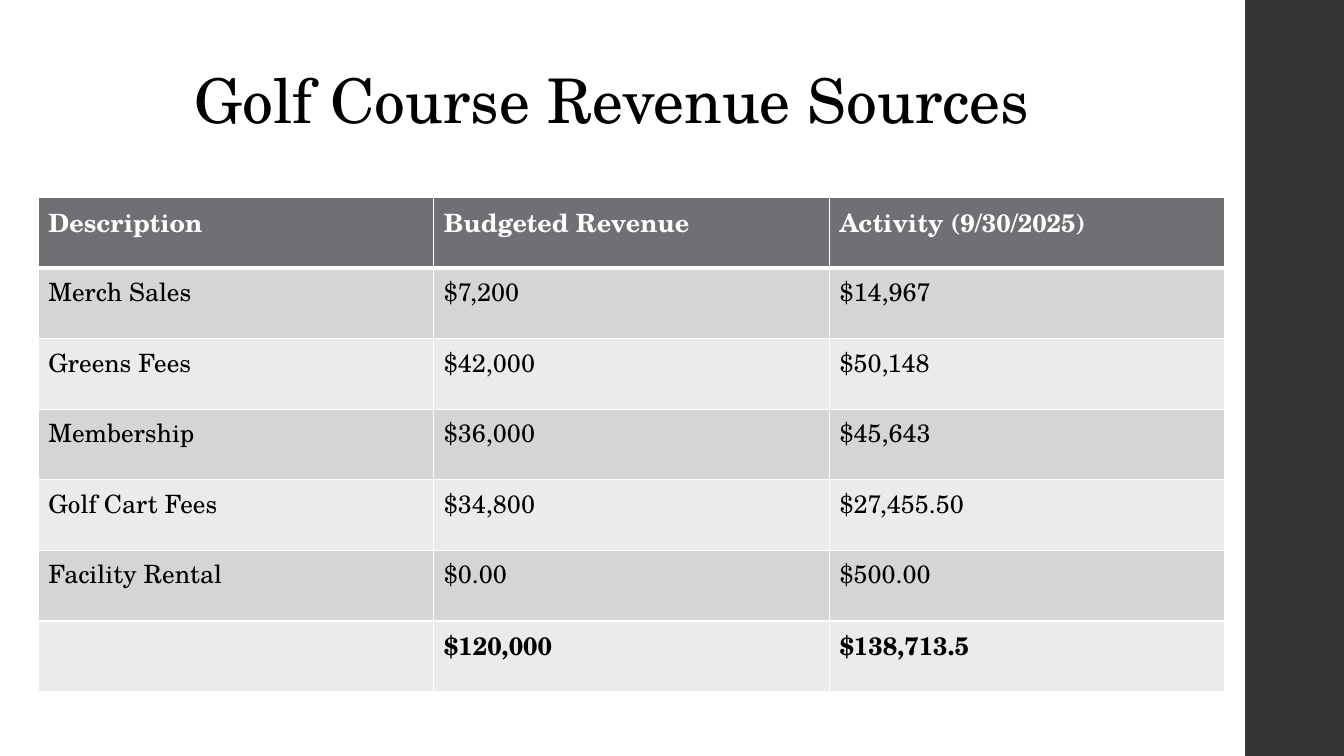
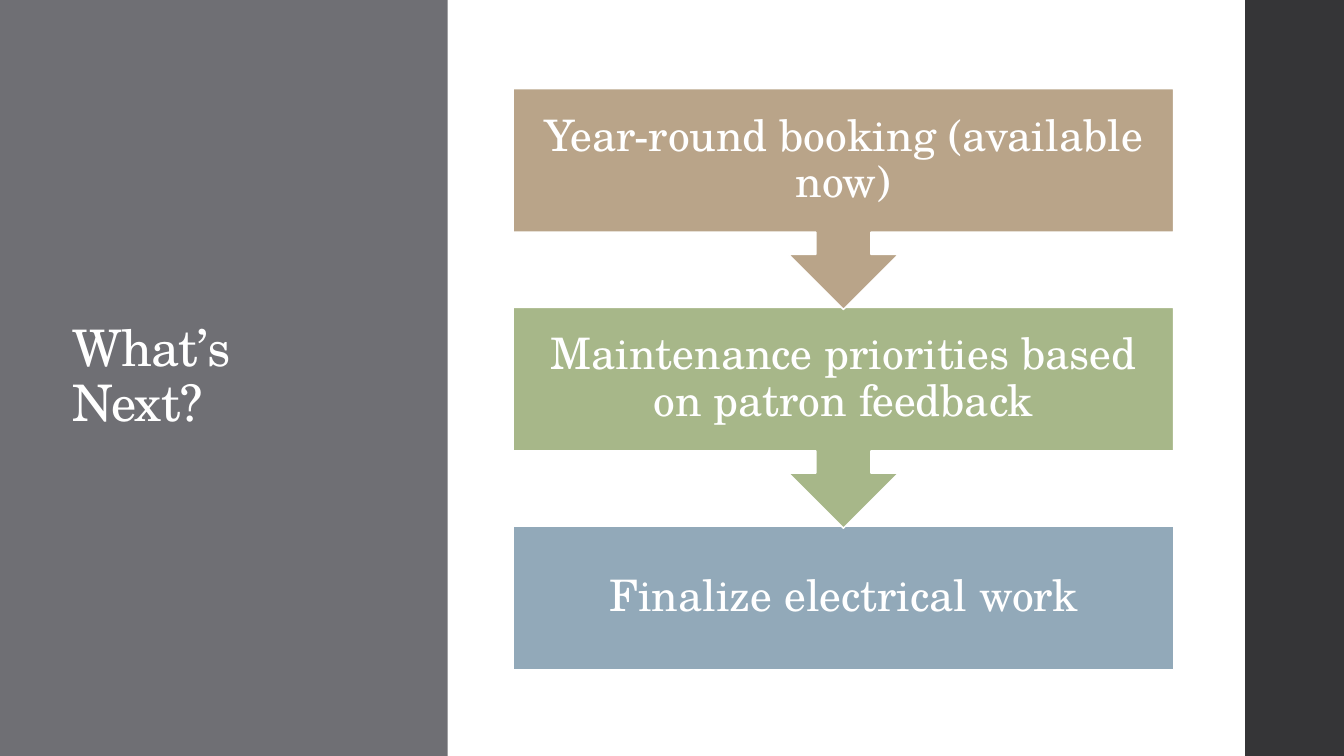
from pptx import Presentation
from pptx.dml.color import RGBColor
from pptx.enum.shapes import MSO_SHAPE as Shape
from pptx.enum.text import MSO_ANCHOR as Anchor, MSO_AUTO_SIZE as AutoSize, PP_ALIGN as Align
from pptx.oxml.ns import qn
from pptx.util import Inches, Pt
from lxml import etree

FONT = "TeX Gyre Schola"
WHITE = RGBColor(0xFF, 0xFF, 0xFF)
BLACK = RGBColor(0x00, 0x00, 0x00)
CHARCOAL = RGBColor(0x35, 0x35, 0x37)
GRAY = RGBColor(0x6F, 0x6F, 0x74)
ROW_DARK = RGBColor(0xD5, 0xD5, 0xD6)
ROW_LIGHT = RGBColor(0xEB, 0xEB, 0xEB)
TAN = RGBColor(0xB9, 0xA4, 0x89)
GREEN = RGBColor(0xA7, 0xB7, 0x89)
BLUE = RGBColor(0x92, 0xA9, 0xB9)


def write_text(frame, text, size, color, bold=False, **paragraph_format):
    paragraph = frame.paragraphs[0]
    for name, value in paragraph_format.items():
        setattr(paragraph, name, value)
    run = paragraph.add_run()
    run.text = text
    for name, value in {"name": FONT, "size": Pt(size), "bold": bold}.items():
        setattr(run.font, name, value)
    run.font.color.rgb = color
    return run


def add_block(slide, kind, left, top, width, height, color):
    shape = slide.shapes.add_shape(kind, Inches(left), Inches(top), Inches(width), Inches(height))
    shape.shadow.inherit = False
    shape.fill.solid()
    shape.fill.fore_color.rgb = color
    shape.line.fill.background()
    return shape


presentation = Presentation()
presentation.slide_width = Inches(13.33)
presentation.slide_height = Inches(7.5)

titles = [
    ("Golf Course Revenue Sources", 44, BLACK, (1.83, 0.56, 8.69, 0.84), 1.0),
    ("What’s Next?", 36, WHITE, (0.62, 0.91, 2.97, 5.67), 0.9),
]
slides = []
title_runs = []
for text, size, color, box, spacing in titles:
    slide = presentation.slides.add_slide(presentation.slide_layouts[5])
    add_block(slide, Shape.RECTANGLE, 12.35, 0, 0.98, 7.5, CHARCOAL)
    title = slide.shapes.title
    for name, value in zip(("left", "top", "width", "height"), box):
        setattr(title, name, Inches(value))
    frame_format = {"word_wrap": True, "auto_size": AutoSize.NONE, "vertical_anchor": Anchor.MIDDLE}
    for name, value in frame_format.items():
        setattr(title.text_frame, name, value)
    title_runs.append(write_text(title.text_frame, text, size, color,
                                 alignment=Align.LEFT, line_spacing=spacing))
    slides.append(slide)
revenue_slide, next_slide = slides

rows = [
    ("Description", "Budgeted Revenue", "Activity (9/30/2025)"),
    ("Merch Sales", "$7,200", "$14,967"),
    ("Greens Fees", "$42,000", "$50,148"),
    ("Membership", "$36,000", "$45,643"),
    ("Golf Cart Fees", "$34,800", "$27,455.50"),
    ("Facility Rental", "$0.00", "$500.00"),
    ("", "$120,000", "$138,713.5"),
]
table = revenue_slide.shapes.add_table(
    len(rows), 3, Inches(0.38), Inches(1.96), Inches(11.77), Inches(4.9)).table
for row_index, row in enumerate(rows):
    is_header = row_index == 0
    is_total = row_index == len(rows) - 1
    row_fill = GRAY if is_header else ROW_DARK if row_index % 2 else ROW_LIGHT
    widths = {"L": 1, "R": 1, "T": 3 if row_index == 1 else 1, "B": 3 if is_header else 1}
    for column_index, text in enumerate(row):
        cell = table.cell(row_index, column_index)
        properties = cell._tc.get_or_add_tcPr()
        for side, width in widths.items():
            border = etree.SubElement(properties, qn(f"a:ln{side}"), w=str(Pt(width)))
            border_fill = etree.SubElement(border, qn("a:solidFill"))
            etree.SubElement(border_fill, qn("a:srgbClr"), val=str(WHITE))
        cell.fill.solid()
        cell.fill.fore_color.rgb = row_fill
        if text:
            write_text(cell.text_frame, text, 18, WHITE if is_header else BLACK,
                       bold=is_header or is_total)

panel = add_block(next_slide, Shape.RECTANGLE, 0, 0, 4.44, 7.5, GRAY)
next_slide.shapes.title.element.addprevious(panel.element)
title_runs[1]._r.get_or_add_rPr().set("spc", "-50")

steps = [
    ("Year-round booking (available now)", TAN, Shape.DOWN_ARROW_CALLOUT, 2.19),
    ("Maintenance priorities based on patron feedback", GREEN, Shape.DOWN_ARROW_CALLOUT, 2.19),
    ("Finalize electrical work", BLUE, Shape.RECTANGLE, 1.42),
]
for index, (text, color, kind, height) in reversed(list(enumerate(steps))):
    step = add_block(next_slide, kind, 5.09, 0.88 + 2.17 * index, 6.55, height, color)
    step.line.color.rgb = WHITE
    step.line.width = Pt(1.1)
    frame = step.text_frame
    for side in ("left", "top", "right", "bottom"):
        setattr(frame, f"margin_{side}", Inches(0.24))
    frame.word_wrap = True
    frame.vertical_anchor = Anchor.MIDDLE
    write_text(frame, text, 31, WHITE, alignment=Align.CENTER, line_spacing=0.9)

presentation.save("out.pptx")
